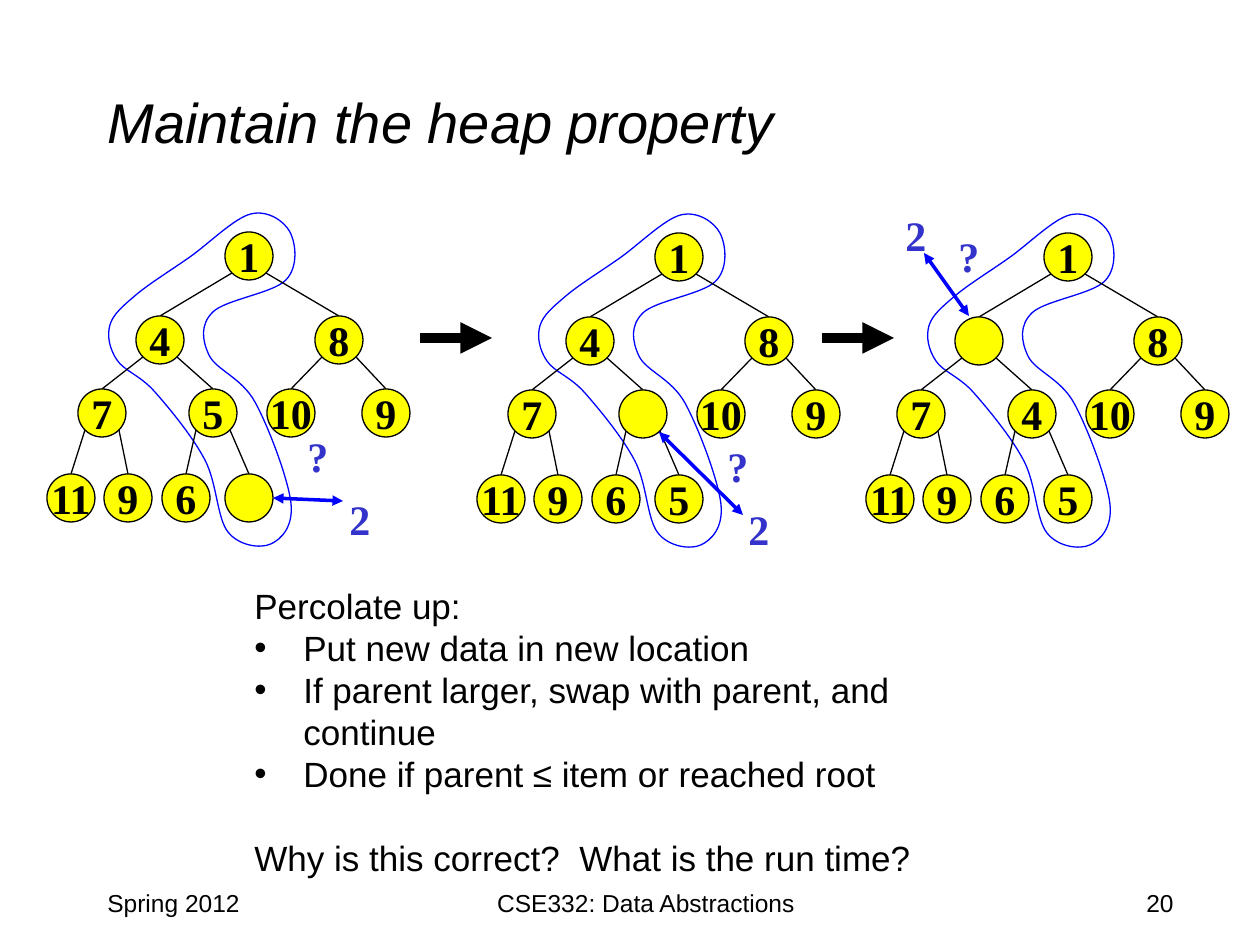
from pptx import Presentation, util as u
from pptx.dml.color import RGBColor
from pptx.enum import shapes as sh, text as tx
from pptx.oxml.ns import qn
from lxml import etree

PX = u.Inches(1) / 126
BLACK = RGBColor(0, 0, 0)
YELLOW = RGBColor(255, 255, 0)
BLUE = RGBColor(0, 0, 255)
INDIGO = RGBColor(0x33, 0x33, 0xCC)
SIZE = 48  # node diameter

deck = Presentation()
deck.slide_width, deck.slide_height = u.Inches(10), u.Inches(7.5)
slide = deck.slides.add_slide(deck.slide_layouts[6])
parts = slide.shapes


def write(words, x, y, w, h, size=14, font="Arial", color=BLACK, bold=False,
          italic=False, align=tx.PP_ALIGN.LEFT, anchor=tx.MSO_ANCHOR.TOP,
          oval=False, fill=None):
    """Put text in a box, or centred in an oval, one paragraph per line."""
    area = [round(v * PX) for v in (x, y, w, h)]
    if oval:
        box = parts.add_shape(sh.MSO_SHAPE.OVAL, *area)
        box.shadow.inherit = False
        if fill is None:
            box.fill.background()
            box.line.fill.background()
        else:
            box.fill.solid()
            box.fill.fore_color.rgb = fill
            box.line.color.rgb = BLACK
            box.line.width = u.Pt(0.75)
        align, anchor = tx.PP_ALIGN.CENTER, tx.MSO_ANCHOR.MIDDLE
    else:
        box = parts.add_textbox(*area)
    frame = box.text_frame
    frame.word_wrap = not oval
    frame.vertical_anchor = anchor
    if words:
        frame.text = words
    for para in frame.paragraphs:
        para.alignment = align
        for run in para.runs:
            run.font.name, run.font.size = font, u.Pt(size)
            run.font.bold, run.font.italic = bold, italic
            run.font.color.rgb = color
    return frame


def join(x1, y1, x2, y2, color=BLACK, width=0.75, ends=()):
    """Draw a line; ends names the arrowheads, headEnd or tailEnd."""
    line = parts.add_connector(sh.MSO_CONNECTOR.STRAIGHT,
                               *[round(v * PX) for v in (x1, y1, x2, y2)])
    line.line.color.rgb = color
    line.line.width = u.Pt(width)
    props = line._element.spPr
    for end in ends:
        etree.SubElement(props.find(qn("a:ln")), qn("a:" + end), type="triangle")
    etree.SubElement(props, qn("a:effectLst"))


write("Maintain the heap property", 95, 42, 1071, 158, size=32, italic=True,
      anchor=tx.MSO_ANCHOR.MIDDLE)

# Node centres in heap order: the parent of i is (i - 1) // 2
SPOTS = [(249, 256), (160, 340), (339, 340),
         (102, 413), (213, 413), (291, 413), (386, 413),
         (71, 498), (128, 498), (186, 498), (249, 498)]

# Points of the smooth loop around the path from the root to the new leaf
LOOP = [(290, 232), (251, 214), (190, 257), (136, 295), (110, 325),
        (117, 360), (155, 392), (205, 460), (228, 532), (271, 544),
        (291, 503), (255, 402), (209, 355), (213, 312), (286, 280)]
curve = [LOOP[0]]  # then two handles and an end point for each bend
for i in range(len(LOOP)):
    a, b, c, d = [LOOP[(i + k) % len(LOOP)] for k in (-1, 0, 1, 2)]
    curve += [[q + (r - p) / 6 for p, q, r in zip(a, b, c)],
              [r - (s - q) / 6 for q, r, s in zip(b, c, d)], c]

# Shift, keys, then centres of "?" and "2", and the double arrow
TREES = [
    (0, 0, "1 4 8 7 5 10 9 11 9 6 _", (318, 456), (360, 519), (343, 501, 273, 498)),
    (430, 1, "1 4 8 7 _ 10 9 11 9 6 5", (738, 466), (759, 529), (659, 432, 743, 515)),
    (819, 1, "1 _ 8 7 4 10 9 11 9 6 5", (969, 256), (916, 235), (924, 253, 969, 316)),
]
for dx, dy, keys, ask, new, arrow in TREES:
    dots = [(round((x + dx) * PX), round((y + dy) * PX)) for x, y in curve]
    pen = parts.build_freeform(*dots[0])
    pen.add_line_segments(dots[1:], close=False)
    loop = pen.convert_to_shape()
    loop.shadow.inherit = False
    loop.fill.background()
    loop.line.color.rgb = BLUE
    loop.line.width = u.Pt(0.75)
    track = next(loop._element.iter(qn("a:moveTo"))).getparent()
    legs = track.findall(qn("a:lnTo"))
    for i in range(0, len(legs), 3):
        bend = etree.SubElement(track, qn("a:cubicBezTo"))
        for leg in legs[i:i + 3]:
            bend.append(leg[0])
            track.remove(leg)
    etree.SubElement(track, qn("a:close"))

    nodes = [(x + dx, y + dy) for x, y in SPOTS]
    for i, (x, y) in enumerate(nodes[1:], 1):
        px, py = nodes[(i - 1) // 2]
        side = -17 if i % 2 else 17
        join(px + side, py + 17, x, y - SIZE // 2)
    for key, (x, y) in zip(keys.split(), nodes):
        write(key.strip("_"), x - SIZE // 2, y - SIZE // 2, SIZE, SIZE, size=24,
              font="Times New Roman", bold=True, oval=True, fill=YELLOW)
    join(*arrow, color=BLUE, width=2, ends=("headEnd", "tailEnd"))
    for mark, (x, y) in (("?", ask), ("2", new)):
        write(mark, x - SIZE // 2, y - SIZE // 2, SIZE, SIZE, size=24,
              font="Times New Roman", color=INDIGO, bold=True, oval=True)

for x in (420, 822):
    join(x, 338, x + 72, 338, width=6, ends=("tailEnd",))

steps = write("Percolate up:\n"
              "Put new data in new location\n"
              "If parent larger, swap with parent, and continue\n"
              "Done if parent ≤ item or reached root\n"
              "Why is this correct?  What is the run time?",
              242, 578, 791, 267, size=20).paragraphs
for para in steps[1:4]:
    props = para._p.get_or_add_pPr()
    props.set("marL", str(round(49 * PX)))
    props.set("indent", str(round(-49 * PX)))
    etree.SubElement(props, qn("a:buFont"), typeface="Arial")
    etree.SubElement(props, qn("a:buChar"), char="•")
steps[-1].space_before = u.Pt(24)

write("Spring 2012", 95, 882, 262, 63)
write("CSE332: Data Abstractions", 410, 882, 472, 63, align=tx.PP_ALIGN.CENTER)
write("20", 1060, 882, 200, 63, align=tx.PP_ALIGN.CENTER)

deck.save("out.pptx")
